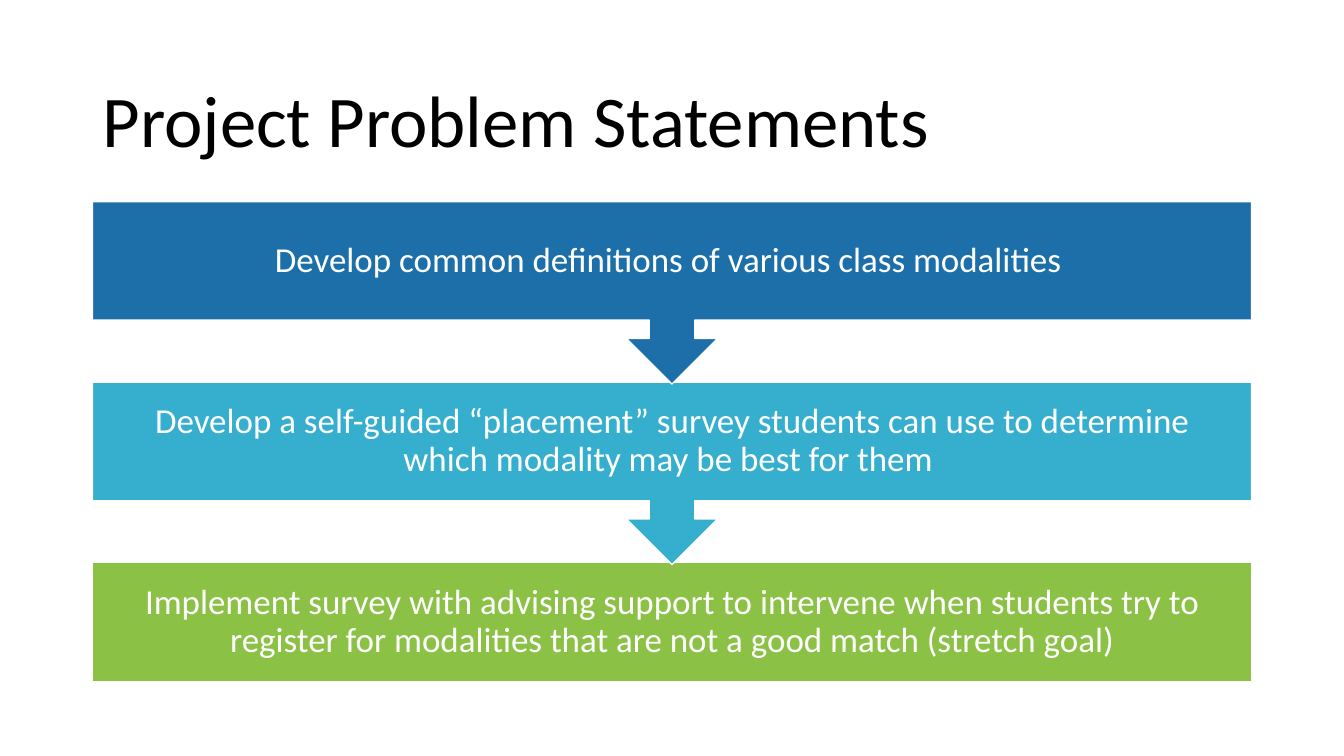
"""Builds the slide of project problem statements as a descending chain of steps."""
from pptx import Presentation
from pptx import util as u
from pptx.dml.color import RGBColor
from pptx.enum import shapes, text

TITLE = "Project Problem Statements"
STEPS = [
    ("Develop common definitions of various class modalities ", "blue"),
    ("Develop a self-guided “placement” survey students can use to determine "
     "which modality may be best for them ", "teal"),
    ("Implement survey with advising support to intervene when students try to "
     "register for modalities that are not a good match (stretch goal)", "green"),
]
COLORS = {"blue": "1D6FA9", "teal": "36AFCE", "green": "8BC145",
          "white": "FFFFFF", "black": "000000"}
FONT = "Calibri"
LEFT, WIDTH = 66, 828
TOP, PITCH = 144, 129
BOX_H, CALLOUT_H = 84.7, 130.3
INSET = 13.7


def color(name):
    return RGBColor.from_string(COLORS[name])


def place(sp, top, height):
    sp.left, sp.top, sp.width, sp.height = map(u.Pt, (LEFT, top, WIDTH, height))


def write(sp, words, size, ink, align):
    tf = sp.text_frame
    tf.word_wrap = True
    tf.auto_size = text.MSO_AUTO_SIZE.NONE
    tf.vertical_anchor = text.MSO_ANCHOR.MIDDLE
    p = tf.paragraphs[0]
    p.text = words
    p.alignment = align
    p.line_spacing = 0.9
    p.font.name, p.font.size = FONT, u.Pt(size)
    p.font.color.rgb = color(ink)
    return tf


def add_step(s, top, words, fill, last):
    kind = shapes.MSO_SHAPE.RECTANGLE if last else shapes.MSO_SHAPE.UP_ARROW_CALLOUT
    sp = s.shapes.add_shape(kind, 0, 0, 0, 0)
    place(sp, top, BOX_H if last else CALLOUT_H)
    sp.rotation = 0 if last else 180
    sp.shadow.inherit = False
    sp.fill.solid()
    sp.fill.fore_color.rgb = color(fill)
    sp.line.color.rgb = color("white")
    sp.line.width = u.Pt(1)

    label = s.shapes.add_textbox(0, 0, 0, 0)
    place(label, top, BOX_H)
    tf = write(label, words, 25, "white", text.PP_ALIGN.CENTER)
    tf.margin_left = tf.margin_right = tf.margin_top = tf.margin_bottom = u.Pt(INSET)


def main():
    prs = Presentation()
    prs.slide_width, prs.slide_height = u.Pt(960), u.Pt(540)
    s = prs.slides.add_slide(prs.slide_layouts[5])
    place(s.shapes.title, 44, 89)
    write(s.shapes.title, TITLE, 52, "black", text.PP_ALIGN.LEFT)
    for i, (words, fill) in reversed(list(enumerate(STEPS))):
        add_step(s, TOP + i * PITCH, words, fill, i == len(STEPS) - 1)
    prs.save("out.pptx")


if __name__ == "__main__":
    main()
